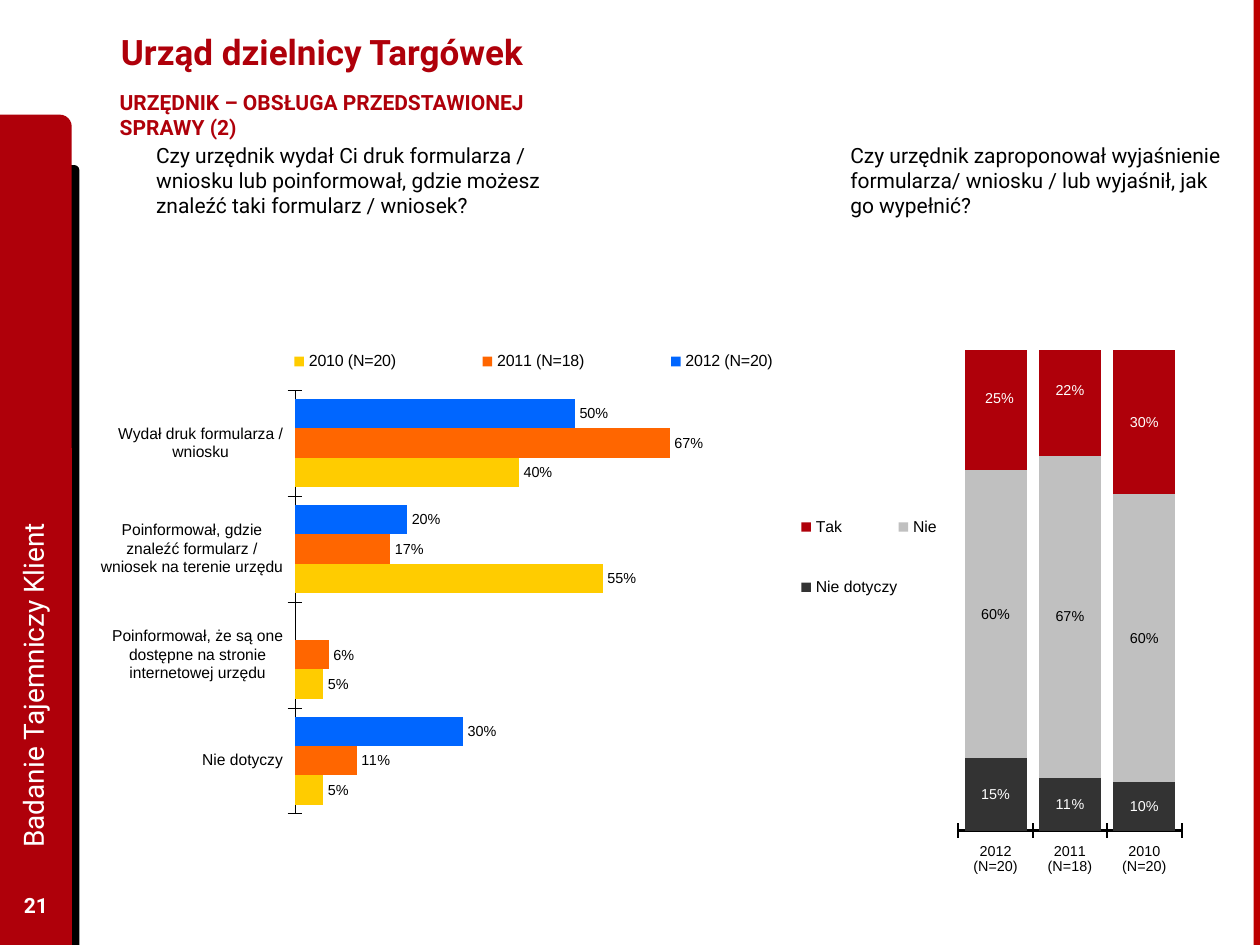
import pptx
import pptx.chart.data
import pptx.dml.color
import pptx.enum.chart
import pptx.enum.shapes
import pptx.enum.text
import pptx.oxml
import pptx.oxml.ns
import pptx.util
from pptx.util import Inches

RGB = pptx.dml.color.RGBColor.from_string
XL = pptx.enum.chart
SHAPE = pptx.enum.shapes.MSO_SHAPE
ALIGN = pptx.enum.text.PP_ALIGN
ANCHOR = pptx.enum.text.MSO_ANCHOR
qn = pptx.oxml.ns.qn

THEME = {
    "red": "AF000A", "edge": "BD0000", "black": "000000", "white": "FFFFFF",
    "dark": "333333", "grey": "C0C0C0",
    "blue": "0066FF", "orange": "FF6600", "yellow": "FFCC00",
    "text_font": "Roboto", "chart_font": "Arial",
    "title": 20, "side": 16, "body": 12,
    "legend": 9, "bar_legend": 9.2, "bar_label": 8.3, "column_label": 8.2,
}


def style(font, size, color="black", face="text_font", bold=False):
    values = {"name": THEME[face], "size": pptx.util.Pt(THEME[size]), "bold": bold}
    for key, value in values.items():
        setattr(font, key, value)
    font.color.rgb = RGB(THEME[color])


def layout(inner=False, **fractions):
    """Manual chart layout from fractions of the chart area."""
    target = '<c:layoutTarget val="inner"/>' if inner else ""
    modes = "".join(f'<c:{k}Mode val="edge"/>' for k in "xy") if "w" in fractions else ""
    sizes = "".join(f'<c:{k} val="{v}"/>' for k, v in fractions.items())
    return pptx.oxml.parse_xml(
        f'<c:layout {pptx.oxml.ns.nsdecls("c")}><c:manualLayout>'
        f"{target}{modes}{sizes}</c:manualLayout></c:layout>")


prs = pptx.Presentation()
prs.slide_width, prs.slide_height = Inches(10), Inches(7.5)
s = prs.slides.add_slide(prs.slide_layouts[5])

# Side band, its black shade and the right edge
for kind, color, box in [
    (SHAPE.ROUND_1_RECTANGLE, "black", (0.39, 1.31, 0.24, 6.19)),
    (SHAPE.ROUND_1_RECTANGLE, "red", (0, 0.91, 0.57, 6.59)),
    (SHAPE.RECTANGLE, "edge", (9.95, 0, 0.05, 7.5)),
]:
    sp = s.shapes.add_shape(kind, *map(Inches, box))
    sp.shadow.inherit = False
    sp.fill.solid()
    sp.fill.fore_color.rgb = RGB(THEME[color])
    sp.line.fill.background()

# Title
title = s.shapes.title
for key, value in zip(("left", "top", "width", "height"), (0.86, 0.05, 7.77, 0.72)):
    setattr(title, key, Inches(value))
title.text_frame.vertical_anchor = ANCHOR.MIDDLE
p = title.text_frame.paragraphs[0]
p.alignment = ALIGN.LEFT
r = p.add_run()
r.text = "Urząd dzielnicy Targówek"
style(r.font, "title", "red", bold=True)

# Subtitle, questions, page number and side label
for text, box, font, frame, align, rotation in [
    ("URZĘDNIK – OBSŁUGA PRZEDSTAWIONEJ SPRAWY (2)", (0.75, 0.66, 3.85, 0.33),
     ("body", "red", "text_font", True),
     {"word_wrap": False, "margin_left": Inches(0.2), "margin_right": Inches(0.2)},
     ALIGN.LEFT, 0),
    ("Czy urzędnik zaproponował wyjaśnienie formularza/ wniosku / lub wyjaśnił, "
     "jak go wypełnić?", (6.65, 1.08, 3.15, 0.71), ("body",), {}, ALIGN.LEFT, 0),
    ("Czy urzędnik wydał Ci druk formularza / wniosku lub poinformował, gdzie możesz "
     "znaleźć taki formularz / wniosek?", (1.14, 1.08, 3.69, 0.71), ("body",), {},
     ALIGN.LEFT, 0),
    ("21", (0, 6.98, 0.57, 0.4), ("body", "white", "text_font", True),
     {"vertical_anchor": ANCHOR.MIDDLE}, ALIGN.CENTER, 0),
    ("Badanie Tajemniczy Klient", (-2.62, 3.69, 5.76, 0.51), ("side", "white"),
     {"vertical_anchor": ANCHOR.MIDDLE}, ALIGN.LEFT, 270),
]:
    sp = s.shapes.add_textbox(*map(Inches, box))
    sp.rotation = rotation
    tf = sp.text_frame
    for key, value in {"word_wrap": True, **frame}.items():
        setattr(tf, key, value)
    p = tf.paragraphs[0]
    p.alignment = align
    r = p.add_run()
    r.text = text
    style(r.font, *font)

# Charts: series are name, values, fill, label colour
charts = [
    {"type": XL.XL_CHART_TYPE.COLUMN_STACKED_100, "box": (6.19, 2.49, 3.22, 4.77),
     "cats": ["2012 (N=20)", "2011 (N=18)", "2010 (N=20)"],
     "series": [("Nie dotyczy", (0.15, 0.11, 0.1), "dark", "white"),
                ("Nie", (0.6, 0.67, 0.6), "grey", "black"),
                ("Tak", (0.25, 0.22, 0.3), "red", "white")],
     "gap": 20, "overlap": 100, "label": "column_label", "axis": "column_label",
     "legend": "legend", "line": 1.17, "reverse": False,
     "label_pos": XL.XL_LABEL_POSITION.CENTER, "legend_pos": XL.XL_LEGEND_POSITION.LEFT,
     "plot": dict(x=0.44, y=0.06, w=0.55, h=0.8),
     "legend_box": dict(x=0.05, y=0.27, w=0.34, h=0.27),
     "moved": {(2, 0): (0.01, -0.02), (2, 1): (0, -0.02)}},
    {"type": XL.XL_CHART_TYPE.BAR_CLUSTERED, "box": (0.8, 2.68, 5.98, 3.78),
     "cats": ["Wydał druk formularza / wniosku",
              "Poinformował, gdzie znaleźć formularz / wniosek na terenie urzędu",
              "Poinformował, że są one dostępne na stronie internetowej urzędu",
              "Nie dotyczy"],
     "series": [("2012 (N=20)", (0.5, 0.2, None, 0.3), "blue", "black"),
                ("2011 (N=18)", (0.67, 0.17, 0.06, 0.11), "orange", "black"),
                ("2010 (N=20)", (0.4, 0.55, 0.05, 0.05), "yellow", "black")],
     "gap": 60, "overlap": 0, "label": "bar_label", "axis": "legend",
     "legend": "bar_legend", "line": 0.25, "reverse": True,
     "label_pos": XL.XL_LABEL_POSITION.OUTSIDE_END,
     "legend_pos": XL.XL_LEGEND_POSITION.RIGHT,
     "plot": dict(x=0.25, y=0.11, w=0.75, h=0.89),
     "legend_box": dict(x=0.14, y=0.01, w=0.86, h=0.08), "moved": {}},
]
for c in charts:
    data = pptx.chart.data.CategoryChartData(number_format="0%")
    data.categories = c["cats"]
    for name, values, *_ in c["series"]:
        data.add_series(name, values)
    chart = s.shapes.add_chart(c["type"], *map(Inches, c["box"]), data).chart
    chart.has_title = False
    style(chart.font, c["label"], face="chart_font")

    # Axes
    axis = chart.category_axis
    for key, value in {"major_tick_mark": XL.XL_TICK_MARK.CROSS,
                       "has_major_gridlines": False,
                       "reverse_order": c["reverse"]}.items():
        setattr(axis, key, value)
    style(axis.tick_labels.font, c["axis"], face="chart_font")
    axis.format.line.color.rgb = RGB(THEME["black"])
    axis.format.line.width = pptx.util.Pt(c["line"])
    for key, value in {"visible": False, "has_major_gridlines": False,
                       "minimum_scale": 0, "maximum_scale": 1,
                       "major_unit": 0.2}.items():
        setattr(chart.value_axis, key, value)

    # Legend and plot area
    chart.has_legend = True
    chart.legend.position = c["legend_pos"]
    chart.legend.include_in_layout = False
    style(chart.legend.font, c["legend"], face="chart_font")
    for tag, new in [("c:plotArea", layout(True, **c["plot"])),
                     ("c:legend", layout(**c["legend_box"]))]:
        part = chart.element.find(".//" + qn(tag))
        old = part.find(qn("c:layout"))
        if old is not None:
            part.remove(old)
        if tag == "c:plotArea":
            part.insert(0, new)
        else:
            part.find(qn("c:legendPos")).addnext(new)

    # Series and value labels
    plot = chart.plots[0]
    plot.gap_width, plot.overlap, plot.vary_by_categories = c["gap"], c["overlap"], False
    for series, (_, _, fill, label) in zip(plot.series, c["series"]):
        series.format.fill.solid()
        series.format.fill.fore_color.rgb = RGB(THEME[fill])
        for key, value in {"show_value": True, "number_format": "0%",
                           "number_format_is_linked": False,
                           "position": c["label_pos"]}.items():
            setattr(series.data_labels, key, value)
        style(series.data_labels.font, c["label"], label, "chart_font")
    for (row, col), (dx, dy) in c["moved"].items():
        series = plot.series[row]
        style(series.points[col].data_label.font, c["label"], c["series"][row][3], "chart_font")
        idx = series.data_labels._element.find(f"{qn('c:dLbl')}/{qn('c:idx')}[@val='{col}']")
        idx.addnext(layout(x=dx, y=dy))

prs.save("out.pptx")
